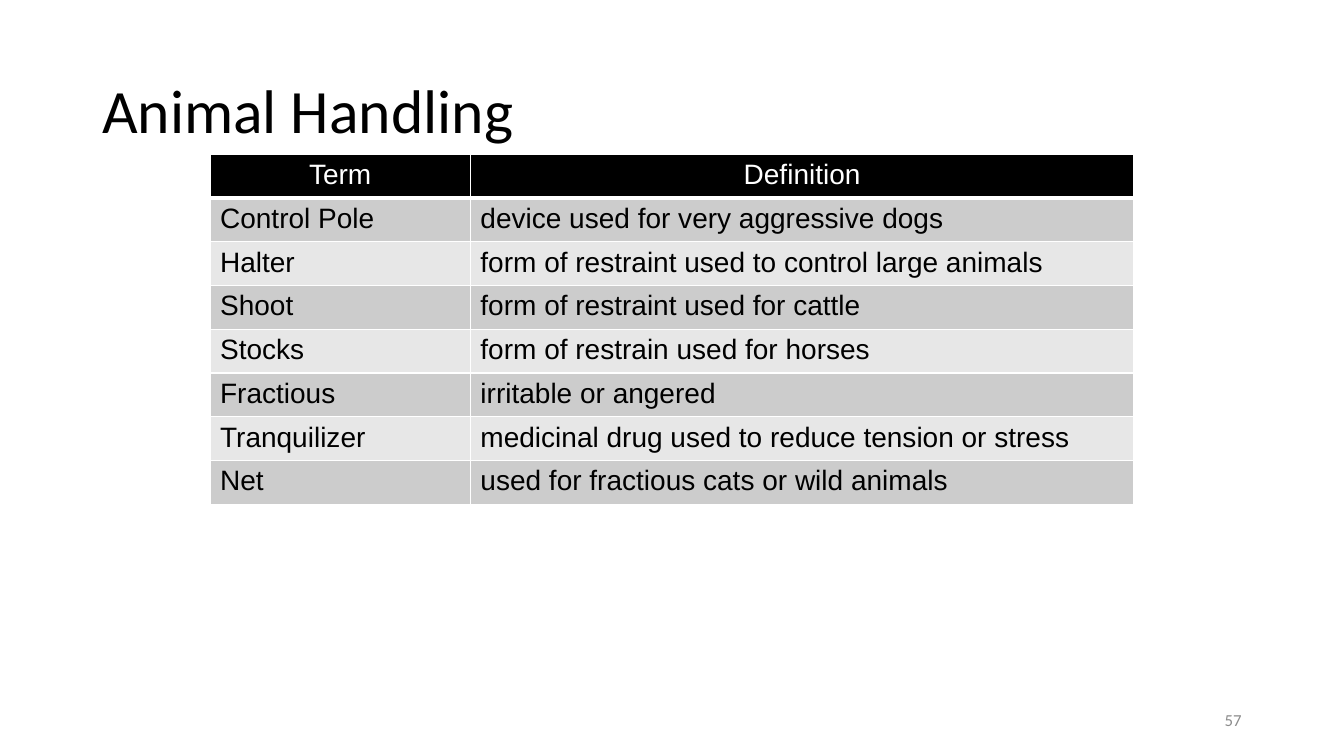
from dataclasses import dataclass

from lxml.etree import SubElement
from pptx import Presentation
from pptx.dml.color import RGBColor
from pptx.enum.text import MSO_ANCHOR, PP_ALIGN
from pptx.oxml.ns import qn
from pptx.util import Pt


@dataclass(frozen=True)
class Theme:
    head: str = "Calibri"
    body: str = "Arial"
    black: str = "000000"
    white: str = "FFFFFF"
    gray: str = "8C8C8C"
    bands: tuple = ("CCCCCC", "E7E7E7")
    title: int = 44
    cell: int = 20
    foot: int = 12
    thin: int = 1
    thick: int = 3


THEME = Theme()
TERMS = [
    ("Term", "Definition"),
    ("Control Pole", "device used for very aggressive dogs"),
    ("Halter", "form of restraint used to control large animals"),
    ("Shoot", "form of restraint used for cattle"),
    ("Stocks", "form of restrain used for horses"),
    ("Fractious", "irritable or angered"),
    ("Tranquilizer", "medicinal drug used to reduce tension or stress"),
    ("Net", "used for fractious cats or wild animals"),
]


def style(para, font, size, color, align=PP_ALIGN.LEFT):
    para.alignment = align
    for run in para.runs:
        run.font.name = font
        run.font.size = Pt(size)
        run.font.color.rgb = RGBColor.from_string(color)


def add_label(slide, box, text, size, color, align=PP_ALIGN.LEFT):
    """Add one line of text, centred vertically in its box."""
    frame = slide.shapes.add_textbox(*map(Pt, box)).text_frame
    frame.word_wrap = True
    frame.vertical_anchor = MSO_ANCHOR.MIDDLE
    frame.text = text
    para = frame.paragraphs[0]
    para.line_spacing = 0.9
    style(para, THEME.head, size, color, align)


def add_rules(cell, top, base):
    """Draw white borders; top and base are widths in points."""
    props = cell._tc.get_or_add_tcPr()
    sides = {"lnL": THEME.thin, "lnR": THEME.thin, "lnT": top, "lnB": base}
    for i, (side, width) in enumerate(sides.items()):
        line = props.makeelement(qn(f"a:{side}"), {"w": str(Pt(width))})
        fill = SubElement(line, qn("a:solidFill"))
        SubElement(fill, qn("a:srgbClr"), val=THEME.white)
        props.insert(i, line)


def add_terms(slide, box, rows, split):
    """Add the glossary table; split is the first column's width."""
    left, top, width, height = box
    frame = slide.shapes.add_table(len(rows), 2, *map(Pt, box))
    table = frame.table
    for col, size in zip(table.columns, (split, width - split)):
        col.width = Pt(size)
    for r, words in enumerate(rows):
        table.rows[r].height = Pt(height / len(rows))
        if r == 0:
            fill, color, align = THEME.black, THEME.white, PP_ALIGN.CENTER
        else:
            fill, color, align = THEME.bands[(r - 1) % 2], THEME.black, PP_ALIGN.LEFT
        for c, word in enumerate(words):
            cell = table.cell(r, c)
            cell.text_frame.text = word
            style(cell.text_frame.paragraphs[0], THEME.body, THEME.cell, color, align)
            cell.fill.solid()
            cell.fill.fore_color.rgb = RGBColor.from_string(fill)
            add_rules(
                cell,
                THEME.thick if r == 1 else THEME.thin,
                THEME.thick if r == 0 else THEME.thin,
            )


def main():
    deck = Presentation()
    deck.slide_width, deck.slide_height = Pt(960), Pt(540)
    slide = deck.slides.add_slide(deck.slide_layouts[6])
    add_label(slide, (66, 28.8, 828, 104.4), "Animal Handling", THEME.title, THEME.black)
    add_label(slide, (678, 500.4, 216, 28.8), "57", THEME.foot, THEME.gray, PP_ALIGN.RIGHT)
    add_terms(slide, (150, 110.2, 660, 236.8), TERMS, 186)
    deck.save("out.pptx")


if __name__ == "__main__":
    main()
